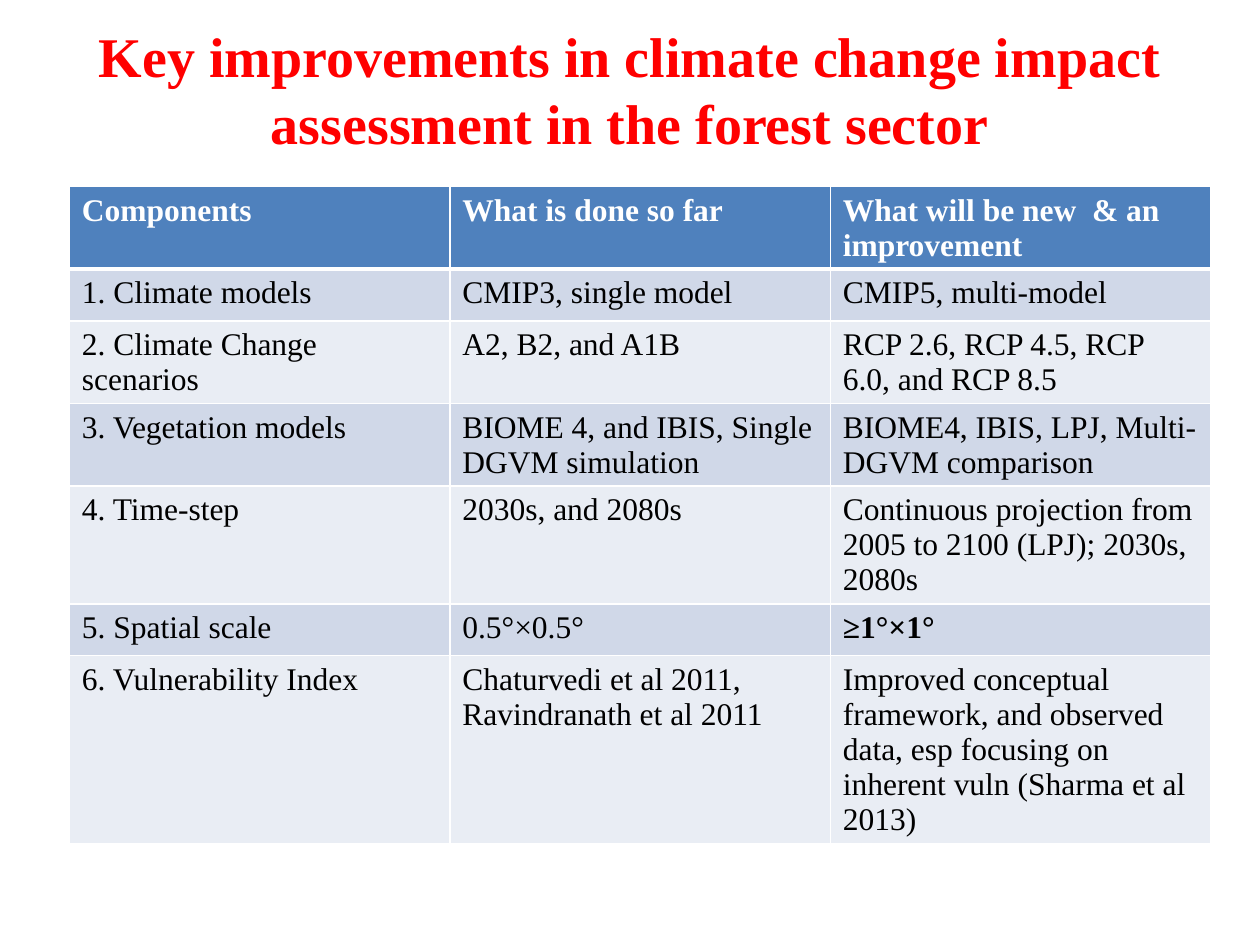
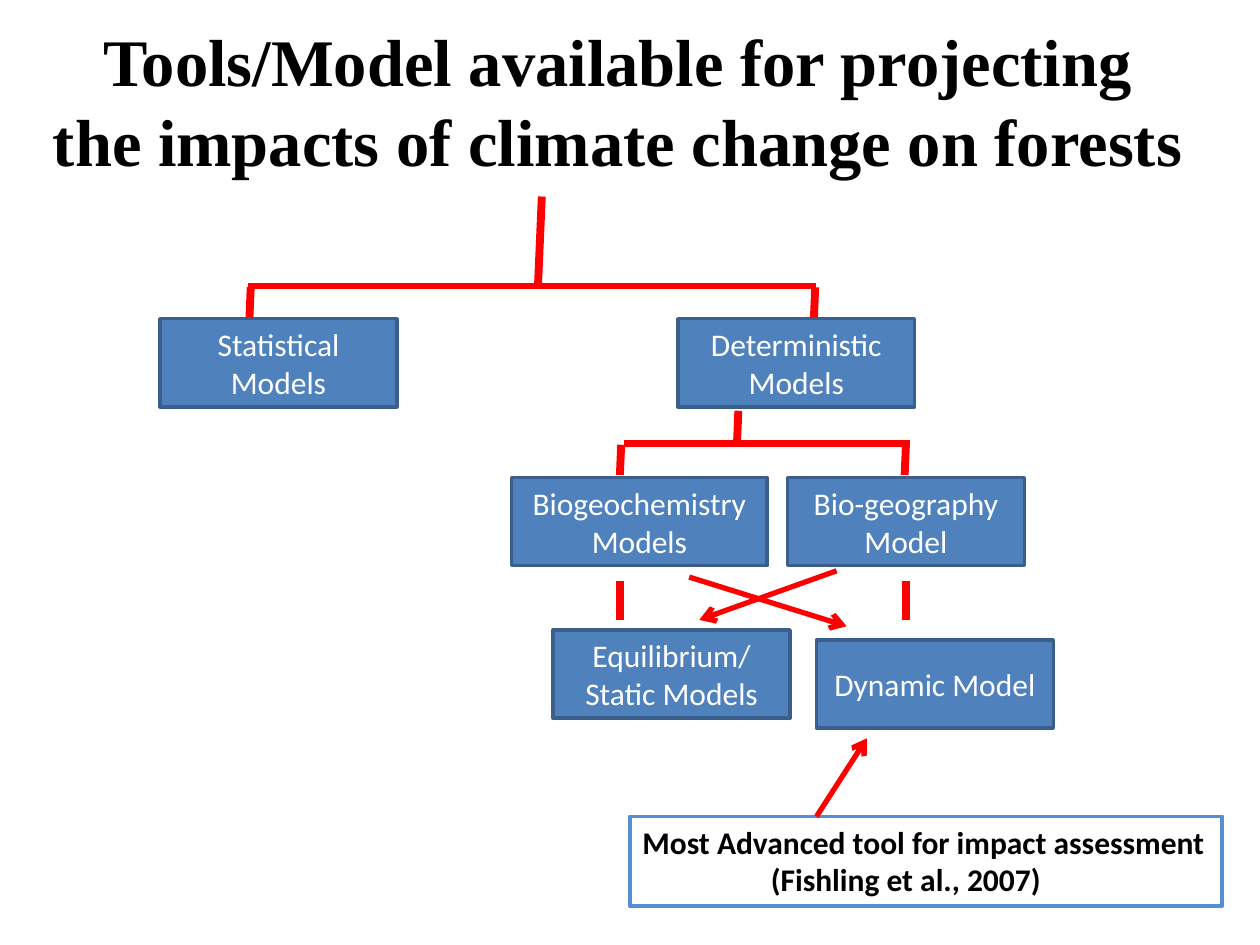
from dataclasses import dataclass

from lxml import etree
from pptx import Presentation
from pptx.dml.color import RGBColor
from pptx.enum import shapes, text
from pptx.oxml.ns import qn
from pptx.util import Emu, Pt

SCALE = 9144  # EMU per px, 100 px to the inch


def px(n):
    return Emu(n * SCALE)


def rgb(code):
    return RGBColor.from_string(code)


@dataclass(frozen=True)
class Theme:
    serif: str = "Times New Roman"
    sans: str = "Calibri"
    white: str = "FFFFFF"
    black: str = "000000"
    red: str = "FF0000"
    blue: str = "4F81BD"
    edge: str = "3A5F8C"
    frame: str = "558ED5"
    bands: tuple = ("D0D8E8", "E9EDF4")
    body: int = 18
    lead: int = 20
    thick: float = 4.5
    thin: float = 3


def write(frame, words, *, font, color, size, bold=False, align=None,
          anchor=None, lead=None):
    """Fill a text frame, one paragraph for each line of words."""
    frame.word_wrap = True
    if anchor is not None:
        frame.vertical_anchor = anchor
    for i, line in enumerate(words.split("\n")):
        para = frame.add_paragraph() if i else frame.paragraphs[0]
        para.alignment = align
        if lead:
            para.line_spacing = Pt(lead)
        run = para.add_run()
        run.text = line
        run.font.name, run.font.size, run.font.bold = font, Pt(size), bold
        run.font.color.rgb = rgb(color)


class Deck:
    def __init__(self, theme):
        self.theme = theme
        self.prs = Presentation()
        self.prs.slide_width, self.prs.slide_height = px(1000), px(750)
        self.slide = None

    def page(self):
        self.slide = self.prs.slides.add_slide(self.prs.slide_layouts[6])

    def title(self, words, x, y, w, size, color):
        box = self.slide.shapes.add_textbox(px(x), px(y), px(w), px(125))
        write(box.text_frame, words, font=self.theme.serif, color=color,
              size=size, bold=True, align=text.PP_ALIGN.CENTER,
              anchor=text.MSO_ANCHOR.MIDDLE)

    def rect(self, x, y, w, h, fill, edge, width):
        box = self.slide.shapes.add_shape(
            shapes.MSO_SHAPE.RECTANGLE, px(x), px(y), px(w), px(h))
        box.shadow.inherit = False
        if fill:
            box.fill.solid()
            box.fill.fore_color.rgb = rgb(fill)
        else:
            box.fill.background()
        box.line.color.rgb, box.line.width = rgb(edge), Pt(width)
        return box

    def model(self, words, x, y, w=188):
        t = self.theme
        box = self.rect(x, y, w, 70, t.blue, t.edge, 2)
        write(box.text_frame, words, font=t.sans, color=t.white, size=t.body,
              align=text.PP_ALIGN.CENTER, anchor=text.MSO_ANCHOR.MIDDLE)

    def note(self, words, x, y, w, h, indent):
        t = self.theme
        box = self.rect(x, y, w, h, None, t.frame, 2.25)
        write(box.text_frame, words, font=t.sans, color=t.black, size=t.body,
              bold=True, align=text.PP_ALIGN.LEFT, anchor=text.MSO_ANCHOR.TOP)
        last = box.text_frame.paragraphs[-1]
        last._p.get_or_add_pPr().set("marL", str(px(indent)))

    def line(self, x1, y1, x2, y2, width, arrow=False):
        link = self.slide.shapes.add_connector(
            shapes.MSO_CONNECTOR.STRAIGHT, px(x1), px(y1), px(x2), px(y2))
        link.line.color.rgb = rgb(self.theme.red)
        link.line.width = Pt(width)
        if arrow:
            etree.SubElement(link.line._get_or_add_ln(), qn("a:tailEnd"),
                             type="arrow")
        etree.SubElement(link._element.spPr, qn("a:effectLst"))

    def fork(self, stem, bar, width, drops):
        """A stem down to a bar, with a short leaning drop at each end."""
        self.line(*stem, self.theme.thick)
        left, right, y = bar
        self.line(left, y, right, y, width)
        for x in drops:
            self.line(x, y + 1, x - 1, y + 25, self.theme.thick)

    def border(self, cell, low):
        props = cell._tc.get_or_add_tcPr()
        sides = {"lnL": 1, "lnR": 1, "lnT": 1, "lnB": low}
        for i, (side, width) in enumerate(sides.items()):
            ln = etree.Element(qn("a:" + side), w=str(Pt(width)))
            fill = etree.SubElement(ln, qn("a:solidFill"))
            etree.SubElement(fill, qn("a:srgbClr"), val=self.theme.white)
            props.insert(i, ln)

    def table(self, rows, x, y, w, tall, strong):
        t = self.theme
        grid = self.slide.shapes.add_table(
            len(rows), len(rows[0]), px(x), px(y), px(w), px(sum(tall))).table
        for col in grid.columns:
            col.width = px(w // len(rows[0]))
        for r, row in enumerate(rows):
            grid.rows[r].height = px(tall[r])
            head = r == 0
            for c, words in enumerate(row):
                cell = grid.cell(r, c)
                cell.fill.solid()
                cell.fill.fore_color.rgb = rgb(
                    t.blue if head else t.bands[(r - 1) % 2])
                self.border(cell, 3 if head else 1)
                write(cell.text_frame, words, font=t.serif, size=t.body,
                      color=t.white if head else t.black,
                      bold=head or (r, c) == strong, lead=t.lead)


ROWS = [
    ("Components", "What is done so far", "What will be new  & an improvement"),
    ("1. Climate models", "CMIP3, single model", "CMIP5, multi-model"),
    ("2. Climate Change scenarios", "A2, B2, and A1B",
     "RCP 2.6, RCP 4.5, RCP 6.0, and RCP 8.5"),
    ("3. Vegetation models", "BIOME 4, and IBIS, Single DGVM simulation",
     "BIOME4, IBIS, LPJ, Multi-DGVM comparison"),
    ("4. Time-step", "2030s, and 2080s",
     "Continuous projection from 2005 to 2100 (LPJ); 2030s, 2080s"),
    ("5. Spatial scale", "0.5°×0.5°", "≥1°×1°"),
    ("6. Vulnerability Index",
     "Chaturvedi et al 2011,\nRavindranath et al 2011",
     "Improved conceptual framework, and observed data, esp focusing on "
     "inherent vuln (Sharma et al 2013)"),
]


def gains(deck):
    deck.page()
    deck.title("Key improvements in climate change impact assessment in the "
               "forest sector", 50, 8, 900, 32, deck.theme.red)
    deck.table(ROWS, 55, 148, 906, (65, 41, 65, 65, 93, 41, 149), (5, 2))


def tools(deck):
    t = deck.theme
    deck.page()
    deck.title("Tools/Model available for projecting the impacts of climate "
               "change on forests", 31, 17, 919, 38, t.black)

    # Model boxes
    deck.model("Statistical Models", 127, 253)
    deck.model("Deterministic Models", 538, 253)
    deck.model("Biogeochemistry Models", 406, 379, 203)
    deck.model("Bio-geography Model", 625, 379)
    deck.model("Equilibrium/\nStatic Models", 439, 500)
    deck.model("Dynamic Model", 648, 508)

    # Branches of the tree
    deck.fork((430, 156, 427, 227), (197, 648, 227), t.thin, (199, 647))
    deck.fork((586, 326, 585, 350), (495, 722, 352), t.thick, (493, 719))
    for x in (492, 719):
        deck.line(x, 461, x, 492, t.thick)

    # Crossing arrows
    deck.line(547, 458, 672, 497, t.thin, arrow=True)
    deck.line(664, 453, 555, 492, t.thin, arrow=True)

    # Note on the dynamic model
    deck.note("Most Advanced tool for impact assessment\n"
              "(Fishling et al., 2007)", 500, 648, 470, 71, 102)
    deck.line(648, 648, 688, 586, t.thin, arrow=True)


def main():
    deck = Deck(Theme())
    gains(deck)
    tools(deck)
    deck.prs.save("out.pptx")


if __name__ == "__main__":
    main()
